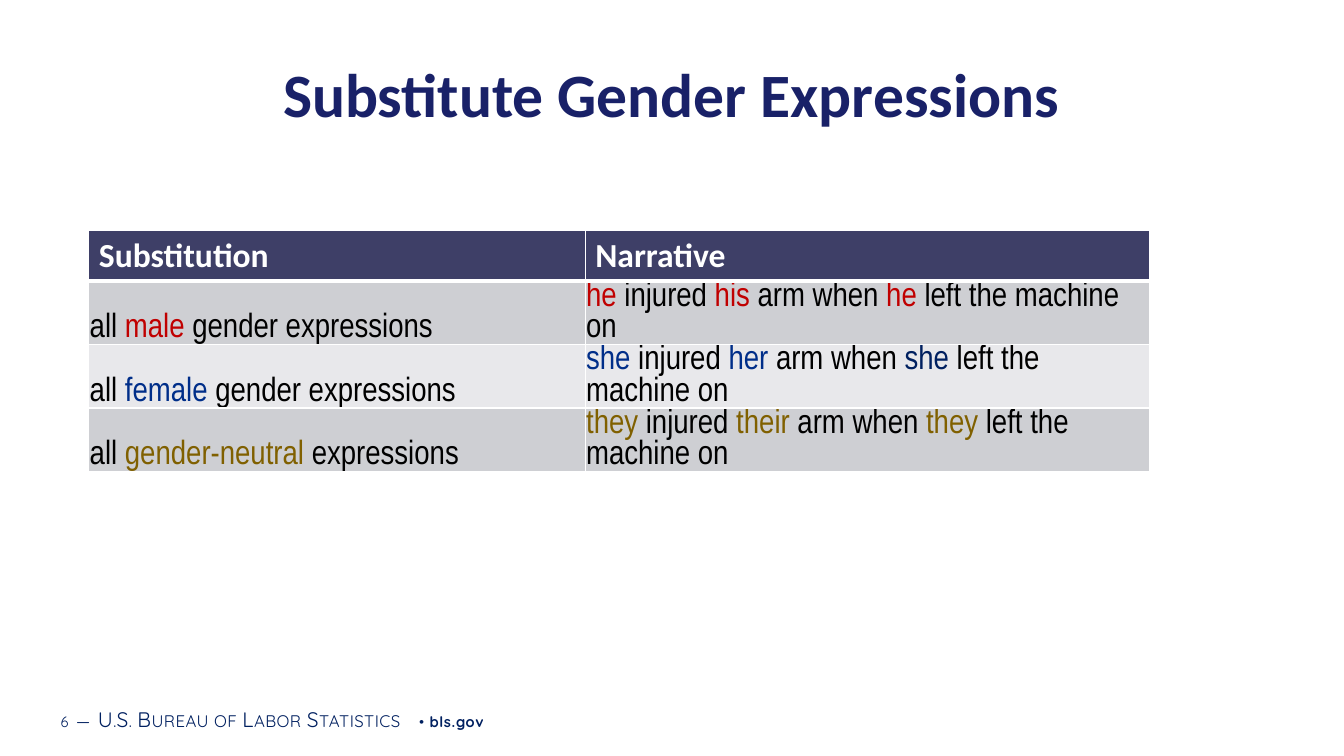
from lxml.etree import SubElement as Sub
from pptx import Presentation
from pptx.dml.color import RGBColor as Rgb
from pptx.enum.text import MSO_ANCHOR as Anchor, PP_ALIGN as Align
from pptx.oxml.ns import qn
from pptx.util import Cm, Pt

NAVY = Rgb(0x19, 0x21, 0x68)
INK = Rgb(0x00, 0x20, 0x60)
HEAD = Rgb(0x3E, 0x3F, 0x67)
DARK = Rgb(0xCE, 0xCF, 0xD3)
LIGHT = Rgb(0xE8, 0xE8, 0xEB)
WHITE = Rgb(0xFF, 0xFF, 0xFF)
BLACK = Rgb(0x00, 0x00, 0x00)
RED = Rgb(0xC0, 0x00, 0x00)
BLUE = Rgb(0x00, 0x2E, 0x89)
GOLD = Rgb(0x80, 0x60, 0x00)

TERMS = [
    ("male", "he", "his", RED, RED),
    ("female", "she", "her", BLUE, INK),
    ("gender-neutral", "they", "their", GOLD, GOLD),
]


def write(para, text, font="Calibri", size=24, color=BLACK, bold=False, space=0, small=False):
    run = para.add_run()
    run.text = text
    run.font.name = font
    run.font.size = Pt(size)
    run.font.bold = bold
    run.font.color.rgb = color
    props = run._r.get_or_add_rPr()
    if space:
        props.set("spc", str(round(space * 100)))
    if small:
        props.set("cap", "small")


def frame(slide, box):
    text = slide.shapes.add_textbox(*map(Cm, box)).text_frame
    text.word_wrap = True
    text.vertical_anchor = Anchor.MIDDLE
    text.margin_left = text.margin_right = Cm(0.18)
    text.margin_top = text.margin_bottom = Cm(0.1)
    return text.paragraphs[0]


def title(slide, box):
    para = frame(slide, box)
    para.alignment = Align.CENTER
    write(para, "Substitute Gender Expressions", size=44, color=NAVY, bold=True)


def footer(slide, box):
    para = frame(slide, box)
    parts = [
        ("6", 10.5, 0.5, False, False),
        (" ", 16, 0.5, False, False),
        ("—", 15, 0.3, True, False),
        (" ", 16, 0.5, False, False),
        ("U.S. Bureau of Labor Statistics", 15, 0.3, True, False),
        (" • ", 10.5, 0.5, False, False),
        ("bls.gov", 10.5, 0.5, False, True),
    ]
    for text, size, space, small, bold in parts:
        write(para, text, font="Quicksand", size=size, color=INK,
              bold=bold, space=space, small=small)


def paint(cell, fill, top=1, base=1):
    props = cell._tc.get_or_add_tcPr()
    for side, width in (("L", 1), ("R", 1), ("T", top), ("B", base)):
        line = Sub(props, qn(f"a:ln{side}"), w=str(Pt(width)))
        Sub(Sub(line, qn("a:solidFill")), qn("a:srgbClr"), val=str(WHITE))
    cell.fill.solid()
    cell.fill.fore_color.rgb = fill


def fill_in(cell, parts):
    cell.vertical_anchor = Anchor.BOTTOM
    cell.margin_left = cell.margin_right = cell.margin_top = Cm(0.02)
    cell.margin_bottom = 0
    para = cell.text_frame.paragraphs[0]
    para.line_spacing = Pt(22.4)
    for text, color in parts:
        write(para, text, font="Arial Narrow", color=color)


def terms(slide, box):
    left, top, width, height = box
    shape = slide.shapes.add_table(len(TERMS) + 1, 2, *map(Cm, box))
    grid = shape.table
    grid.horz_banding = False
    first = 12.51
    grid.columns[0].width = Cm(first)
    grid.columns[1].width = Cm(width - first)
    for row in grid.rows:
        row.height = Cm(1.03)
    shape.height = Cm(height)
    for col, name in enumerate(("Substitution", "Narrative")):
        cell = grid.cell(0, col)
        paint(cell, HEAD, base=3)
        write(cell.text_frame.paragraphs[0], name, color=WHITE, bold=True)
    for row, (kind, who, whose, color, last) in enumerate(TERMS, 1):
        rule = [("all ", BLACK), (kind, color),
                (" expressions" if "gender" in kind else " gender expressions", BLACK)]
        story = [(who, color), (" injured ", BLACK), (whose, color),
                 (" arm when ", BLACK), (who, last), (" left the machine on", BLACK)]
        for col, parts in enumerate((rule, story)):
            cell = grid.cell(row, col)
            paint(cell, DARK if row % 2 else LIGHT, top=3 if row == 1 else 1)
            fill_in(cell, parts)


def main():
    deck = Presentation()
    deck.slide_width, deck.slide_height = Cm(33.87), Cm(19.05)
    slide = deck.slides.add_slide(deck.slide_layouts[6])
    footer(slide, (1.35, 17.6, 21.5, 1.02))
    title(slide, (1.37, 1.22, 31.12, 2.24))
    terms(slide, (2.24, 5.81, 26.72, 7.42))
    deck.save("out.pptx")


if __name__ == "__main__":
    main()
